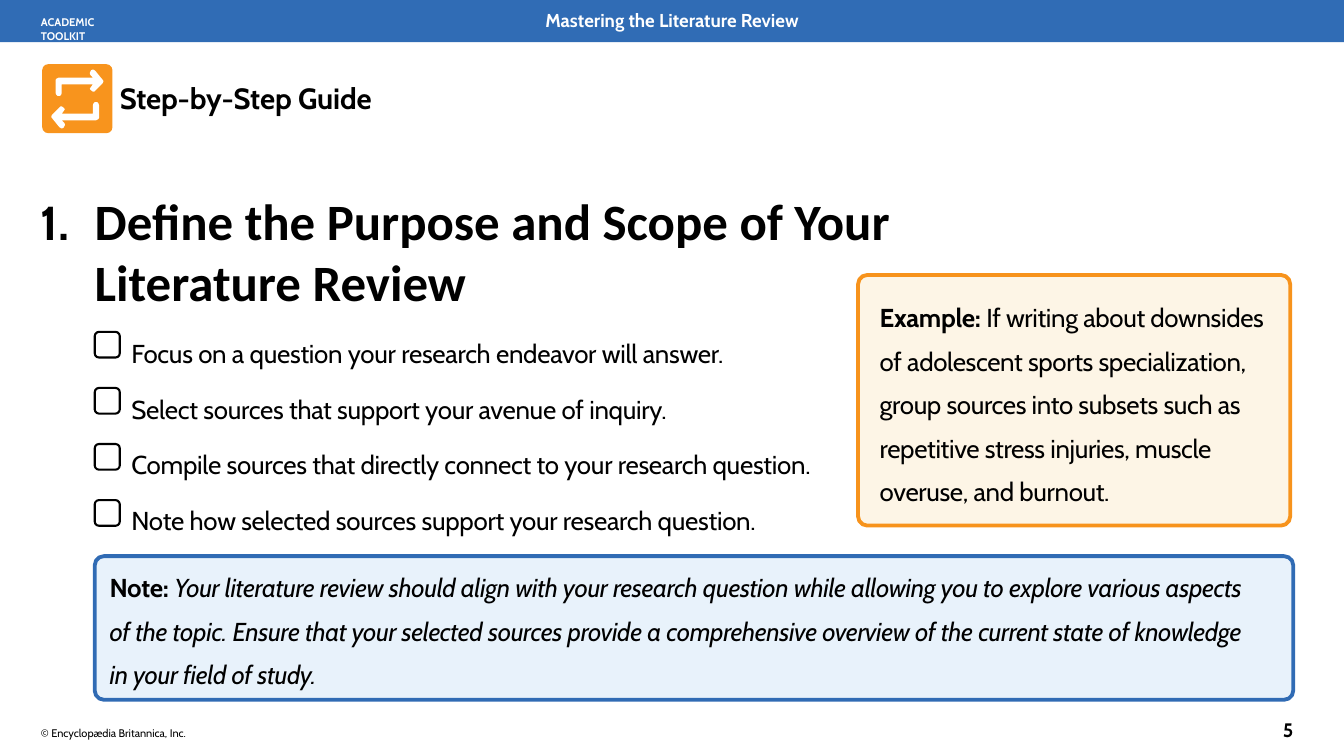
import pptx
import pptx.dml.color
import pptx.enum.shapes
import pptx.enum.text
import pptx.util
from lxml import etree
from pptx.oxml.ns import qn

# The grid has columns and rows of one inch; a box is (column, row, columns, rows).
COLS, ROWS = 21.99, 12.37
LEFT, INDENT, RIGHT = 0.67, 0.88, 21.16
SHAPES = pptx.enum.shapes.MSO_SHAPE
ALIGN = pptx.enum.text.PP_ALIGN
COLORS = {
    "black": "000000", "white": "FFFFFF", "banner": "306CB5", "icon": "F8941D",
    "example": "FDF5E6", "example line": "F7931C",
    "note": "E8F2FB", "note line": "306BB4",
}
TASKS = [
    "Focus on a question your research endeavor will answer.",
    "Select sources that support your avenue of inquiry.",
    "Compile sources that directly connect to your research question.",
    "Note how selected sources support your research question.",
]
EXAMPLE = ("If writing about downsides of adolescent sports specialization, group sources "
           "into subsets such as repetitive stress injuries, muscle overuse, and burnout.")
NOTE = ("Your literature review should align with your research question while allowing you "
        "to explore various aspects of the topic. Ensure that your selected sources provide "
        "a comprehensive overview of the current state of knowledge in your field of study.")
# Outline of the upper arrow, in hundredths of an inch from the icon's corner
ARROW = [
    (100, 27), (87, 11), (84, 9), (82, 9), (80, 10), (79, 12), (78, 14), (78, 16),
    (79, 18), (83, 22), (27, 22), (25, 23), (23, 24), (22, 26), (22, 47), (23, 50),
    (25, 52), (29, 52), (31, 50), (32, 47), (32, 33), (83, 33), (80, 37), (78, 40),
    (79, 42), (83, 45), (85, 45), (99, 31), (100, 29),
]


def rgb(name):
    return pptx.dml.color.RGBColor.from_string(COLORS[name])


def emu(box):
    return [pptx.util.Inches(v) for v in box]


def write(p, text, size=30.5, color="black", bold=False, italic=False, spc=0, font="Cabin"):
    """Append a run; spc is letter spacing in points."""
    r = p.add_run()
    r.text = text
    r.font.name, r.font.size = font, pptx.util.Pt(size)
    r.font.bold, r.font.italic = bold, italic
    r.font.color.rgb = rgb(color)
    if spc:
        r._r.get_or_add_rPr().set("spc", str(round(spc * 100)))


def set_frame(tf, margins=(0, 0, 0, 0)):
    tf.word_wrap = True
    tf.auto_size = pptx.enum.text.MSO_AUTO_SIZE.NONE
    tf.vertical_anchor = pptx.enum.text.MSO_ANCHOR.TOP
    tf.margin_left, tf.margin_top, tf.margin_right, tf.margin_bottom = emu(margins)
    return tf


def set_indent(p, left=0, first=0):
    pPr = p._p.get_or_add_pPr()
    pPr.set("marL", str(pptx.util.Inches(left)))
    pPr.set("indent", str(pptx.util.Inches(first)))
    return pPr


def place(sp, box):
    sp.left, sp.top, sp.width, sp.height = emu(box)


def add_label(s, box, text, align=ALIGN.LEFT, **fmt):
    sp = s.shapes.add_textbox(*emu(box))
    p = set_frame(sp.text_frame, (0, 0.02, 0, 0)).paragraphs[0]
    p.alignment = align
    write(p, text, **fmt)


def paint(sp, fill=None, line=None, width=1):
    sp.shadow.inherit = False
    if fill:
        sp.fill.solid()
        sp.fill.fore_color.rgb = rgb(fill)
    else:
        sp.fill.background()
    if line:
        sp.line.color.rgb = rgb(line)
        sp.line.width = pptx.util.Pt(width)
    else:
        sp.line.fill.background()


def add_panel(s, box, radius=0, **look):
    """Add a rectangle with corners of the given radius in inches."""
    kind = SHAPES.ROUNDED_RECTANGLE if radius else SHAPES.RECTANGLE
    sp = s.shapes.add_shape(kind, *emu(box))
    if radius:
        sp.adjustments[0] = radius / min(box[2:])
    paint(sp, **look)
    return sp


def add_callout(s, box, lead, text, kind, margins, italic=False):
    sp = add_panel(s, box, radius=0.15, fill=kind, line=kind + " line", width=4.5)
    p = set_frame(sp.text_frame, margins).paragraphs[0]
    p.alignment, p.line_spacing = ALIGN.LEFT, 1.4
    write(p, lead + "\u00a0", bold=True, spc=-0.4)
    write(p, text, italic=italic, spc=-0.4)


def add_banner(s, box):
    x, y, w, h = box
    add_panel(s, box, fill="banner")
    add_label(s, (x + (w - 6.5) / 2, y + 0.13, 6.5, 0.39), "Mastering the Literature Review",
              ALIGN.CENTER, size=22, color="white", bold=True)
    add_label(s, (x + LEFT, y + 0.24, 1.6, 0.45), "ACADEMIC TOOLKIT",
              size=13, color="white", bold=True)


def add_guide_label(s, box):
    x, y, w, h = box
    add_panel(s, (x, y, 1.15, h), radius=0.1, fill="icon")
    lower = [(115 - px, 114 - py) for px, py in ARROW]
    outlines = [[(round(x * 100) + px, round(y * 100) + py) for px, py in outline]
                for outline in (ARROW, lower)]
    fb = s.shapes.build_freeform(*outlines[0][0], scale=pptx.util.Inches(0.01))
    fb.add_line_segments(outlines[0][1:], close=True)
    fb.move_to(*outlines[1][0])
    fb.add_line_segments(outlines[1][1:], close=True)
    paint(fb.convert_to_shape(), fill="white")
    add_label(s, (x + 1.27, y + 0.25, w - 1.27, 0.61), "Step-by-Step Guide",
              size=34.5, bold=True, spc=-0.15)


def add_heading(s, box):
    sp = s.shapes.title
    place(sp, box)
    p = set_frame(sp.text_frame).paragraphs[0]
    p.alignment = ALIGN.LEFT
    set_indent(p, INDENT, -INDENT)
    heading = dict(size=60, bold=True, font="Calibri")
    write(p, "1.\t", size=56, bold=True, spc=-0.2)
    write(p, "Define the Purpose and Scope of Your ", **heading)
    p.add_line_break()
    write(p, "Literature Review", **heading)


def add_checklist(s, box):
    x, y, w, h = box
    pitch = h / len(TASKS)
    sp = s.placeholders[1]
    place(sp, (x + 0.6, y, w - 0.6, h))
    tf = set_frame(sp.text_frame)
    for i, task in enumerate(TASKS):
        p = tf.add_paragraph() if i else tf.paragraphs[0]
        etree.SubElement(set_indent(p), qn("a:buNone"))
        p.line_spacing = 1.3
        p.space_before = pptx.util.Pt(18 if i else 0)
        write(p, task, spc=-0.3)
        add_panel(s, (x, y + 0.06 + i * pitch, 0.41, 0.42), radius=0.07,
                  line="black", width=2.47)


def add_footer(s, box):
    x, y, w, h = box
    add_label(s, (x, y + 0.14, 2.57, 0.25), "© Encyclopædia Britannica, Inc.", size=13)
    add_label(s, (x + w - 0.17, y, 0.37, h), "5", size=23, bold=True)


def main():
    prs = pptx.Presentation()
    prs.slide_width, prs.slide_height = emu((COLS, ROWS))
    s = prs.slides.add_slide(prs.slide_layouts[1])
    text_left = LEFT + INDENT
    add_banner(s, (0, 0, COLS, 0.69))
    add_guide_label(s, (0.69, 1.05, 5.49, 1.13))
    add_heading(s, (LEFT, 3.1, RIGHT - LEFT, 2.05))
    add_checklist(s, (text_left, 5.37, 12.3, 3.67))
    add_callout(s, (14.04, 4.5, 7.07, 4.1), "Example:", EXAMPLE, "example",
                (0.31, 0.19, 0.06, 0))
    add_callout(s, (text_left, 9.1, RIGHT - text_left, 2.35), "Note:", NOTE, "note",
                (0.2, 0.01, 0.56, 0), italic=True)
    add_footer(s, (LEFT, 11.72, RIGHT - LEFT, 0.41))
    prs.save("out.pptx")


if __name__ == "__main__":
    main()
